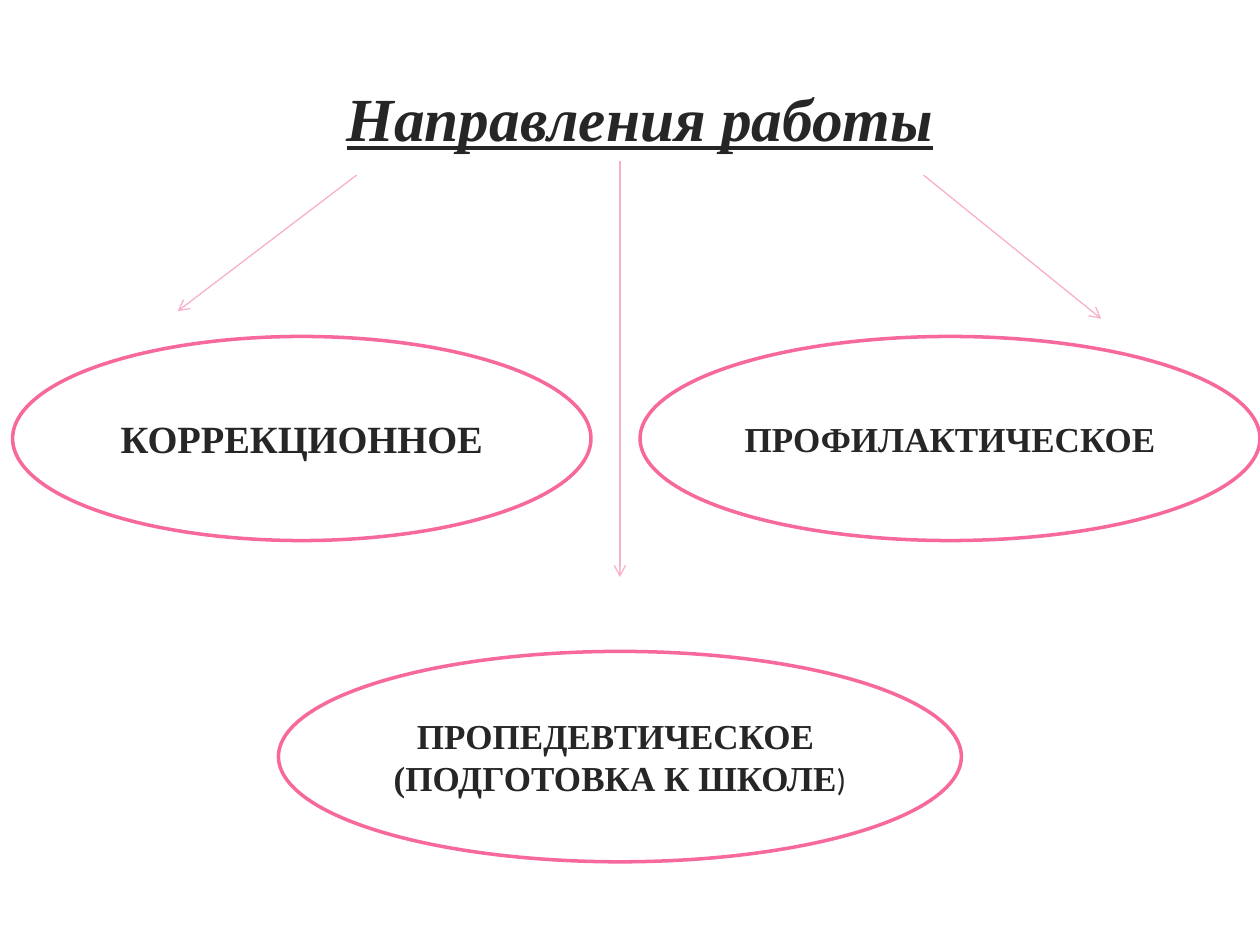
from pptx import Presentation
from pptx.dml.color import RGBColor
from pptx.enum.shapes import MSO_CONNECTOR, MSO_SHAPE
from pptx.enum.text import MSO_ANCHOR, MSO_AUTO_SIZE, PP_ALIGN
from pptx.oxml.ns import qn
from pptx.util import Inches, Pt
from lxml.etree import SubElement

# Content
TITLE = "Направления работы"
TITLE_BOX = (1.42, 0.58, 7.32, 0.69)

# Each direction: box, text size, lines
DIRECTIONS = [
    ((0.1, 2.67, 4.59, 1.62), "large", ["КОРРЕКЦИОННОЕ"]),
    ((2.21, 5.17, 5.42, 1.67), "medium", ["ПРОПЕДЕВТИЧЕСКОЕ ", "(ПОДГОТОВКА К ШКОЛЕ"]),
    ((5.08, 2.67, 4.92, 1.62), "medium", ["ПРОФИЛАКТИЧЕСКОЕ"]),
]
CLOSING_BRACKET = ")"

# Each arrow: start x, start y, end x, end y
ARROWS = [
    (2.83, 1.39, 1.41, 2.47),
    (4.92, 1.28, 4.92, 4.58),
    (7.33, 1.39, 8.74, 2.53),
]

THEME = {
    "font": "Times New Roman",
    "plain_font": "Calibri",
    "text": RGBColor.from_string("262626"),
    "fill": RGBColor.from_string("FFFFFF"),
    "outline": RGBColor.from_string("F7699C"),
    "arrow": RGBColor.from_string("F8B0CC"),
    "size": {"title": 35, "large": 22, "medium": 20, "small": 18},
}


def add_text(paragraph, text, size, font=THEME["font"], bold=True, italic=False, underline=False):
    paragraph.alignment = PP_ALIGN.CENTER
    run = paragraph.add_run()
    run.text = text
    run.font.name = font
    run.font.size = Pt(THEME["size"][size])
    run.font.color.rgb = THEME["text"]
    run.font.bold = bold
    run.font.italic = italic
    run.font.underline = underline


def add_arrow(slide, start_x, start_y, end_x, end_y):
    arrow = slide.shapes.add_connector(
        MSO_CONNECTOR.STRAIGHT, *map(Inches, (start_x, start_y, end_x, end_y)))
    arrow.line.color.rgb = THEME["arrow"]
    arrow.line.width = Pt(0.75)
    SubElement(arrow.line._get_or_add_ln(), qn("a:tailEnd"), type="arrow")
    SubElement(arrow._element.spPr, qn("a:effectLst"))


def add_direction(slide, box, size, lines):
    ellipse = slide.shapes.add_shape(MSO_SHAPE.OVAL, *map(Inches, box))
    ellipse.shadow.inherit = False
    ellipse.fill.solid()
    ellipse.fill.fore_color.rgb = THEME["fill"]
    ellipse.line.color.rgb = THEME["outline"]
    ellipse.line.width = Pt(2)
    frame = ellipse.text_frame
    frame.word_wrap = True
    frame.vertical_anchor = MSO_ANCHOR.MIDDLE
    for index, line in enumerate(lines):
        paragraph = frame.add_paragraph() if index else frame.paragraphs[0]
        add_text(paragraph, line, size)
    return frame


def main():
    presentation = Presentation()
    presentation.slide_width, presentation.slide_height = Inches(10), Inches(7.5)
    slide = presentation.slides.add_slide(presentation.slide_layouts[5])

    # Title
    title = slide.shapes.title
    title.left, title.top, title.width, title.height = map(Inches, TITLE_BOX)
    title.text_frame.word_wrap = False
    title.text_frame.auto_size = MSO_AUTO_SIZE.NONE
    title.text_frame.vertical_anchor = MSO_ANCHOR.MIDDLE
    add_text(title.text_frame.paragraphs[0], TITLE, "title", italic=True, underline=True)

    # Arrows from the title to the directions
    for arrow in ARROWS:
        add_arrow(slide, *arrow)

    # Directions
    for box, size, lines in DIRECTIONS:
        frame = add_direction(slide, box, size, lines)
        if lines[-1].startswith("("):
            add_text(frame.paragraphs[-1], CLOSING_BRACKET, "small",
                     font=THEME["plain_font"], bold=False)

    presentation.save("out.pptx")


if __name__ == "__main__":
    main()
